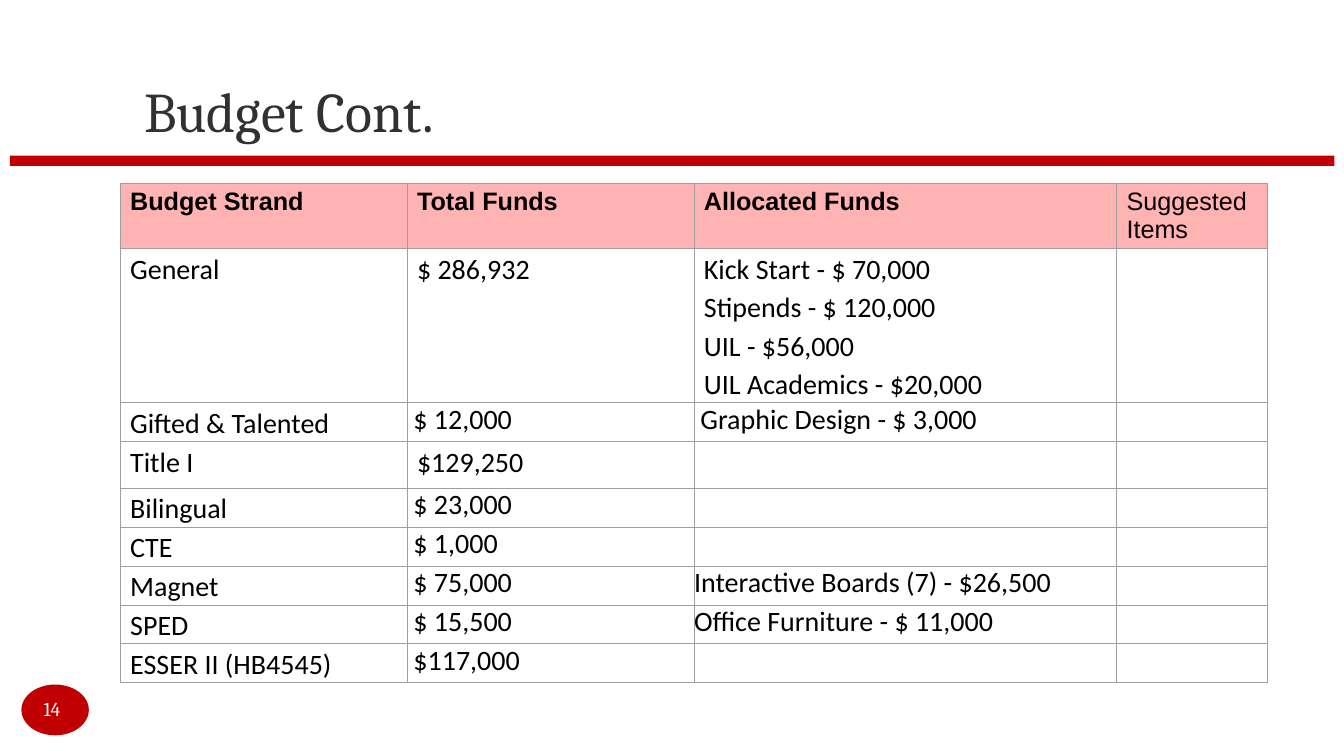
from lxml.etree import SubElement
from pptx import Presentation
from pptx.dml.color import RGBColor
from pptx.enum.shapes import MSO_SHAPE
from pptx.enum.text import MSO_ANCHOR, MSO_AUTO_SIZE, PP_ALIGN
from pptx.oxml.ns import qn
from pptx.util import Cm, Pt

RED = RGBColor(0xC0, 0x00, 0x00)
PINK = RGBColor(0xFF, 0xB3, 0xB3)
WHITE = RGBColor(0xFF, 0xFF, 0xFF)
BLACK = RGBColor(0x00, 0x00, 0x00)
CHARCOAL = RGBColor(0x31, 0x31, 0x31)
GREY = RGBColor(0x9E, 0x9E, 0x9E)


def add_text(paragraph, text, font_name, size, color, bold=False):
    run = paragraph.add_run()
    run.text = text
    run.font.name = font_name
    run.font.size = Pt(size)
    run.font.color.rgb = color
    run.font.bold = bold


def draw_borders(cell):
    properties = cell._tc.get_or_add_tcPr()
    for side in ("lnL", "lnR", "lnT", "lnB"):
        line = SubElement(properties, qn(f"a:{side}"), w=str(Pt(0.75)))
        fill = SubElement(line, qn("a:solidFill"))
        SubElement(fill, qn("a:srgbClr"), val=str(GREY))


presentation = Presentation()
presentation.slide_width = Cm(33.87)
presentation.slide_height = Cm(19.05)
slide = presentation.slides.add_slide(presentation.slide_layouts[5])

# Red rule and page badge
for preset, left, top, width, height in (
    (MSO_SHAPE.RECTANGLE, 0.25, 3.92, 33.38, 0.26),
    (MSO_SHAPE.OVAL, 0.54, 17.25, 1.7, 1.28),
):
    shape = slide.shapes.add_shape(preset, Cm(left), Cm(top), Cm(width), Cm(height))
    shape.shadow.inherit = False
    shape.fill.solid()
    shape.fill.fore_color.rgb = RED
    shape.line.fill.background()

# Title and page number
title = slide.shapes.title
title.left, title.top, title.width, title.height = Cm(3.63), Cm(1.93), Cm(7.8), Cm(1.75)
page_number = slide.shapes.add_textbox(Cm(1.1), Cm(17.55), Cm(0.8), Cm(0.66))
for box, text, size, color in (
    (title, "Budget Cont.", 40, CHARCOAL),
    (page_number, "14", 14, WHITE),
):
    frame = box.text_frame
    frame.margin_left = frame.margin_right = frame.margin_top = frame.margin_bottom = 0
    frame.vertical_anchor = MSO_ANCHOR.TOP
    frame.auto_size = MSO_AUTO_SIZE.NONE
    frame.word_wrap = True
    frame.paragraphs[0].alignment = PP_ALIGN.LEFT
    add_text(frame.paragraphs[0], text, "Cambria", size, color)

# Budget table
HEADERS = ["Budget Strand", "Total Funds", "Allocated Funds", "Suggested Items"]
GENERAL_ITEMS = [
    "Kick Start - $ 70,000",
    "Stipends - $ 120,000",
    "UIL - $56,000",
    "UIL Academics - $20,000",
]
STRANDS = [
    ("General", "$ 286,932", GENERAL_ITEMS),
    ("Gifted & Talented", "$ 12,000", ["Graphic Design - $ 3,000"]),
    ("Title I", "$129,250", []),
    ("Bilingual", "$ 23,000", []),
    ("CTE", "$ 1,000", []),
    ("Magnet", "$ 75,000", ["Interactive Boards (7) - $26,500"]),
    ("SPED", "$ 15,500", ["Office Furniture - $ 11,000"]),
    ("ESSER II (HB4545)", "$117,000", []),
]
COLUMN_WIDTHS = [7.23, 7.23, 10.65, 3.81]
ROW_HEIGHTS = [1.64, 3.84, 0.98, 1.18] + [0.98] * 5
PADDED_ROWS = ("Budget Strand", "General", "Title I")
FLUSH_ROWS = ("Magnet", "SPED")

rows = [[[header] for header in HEADERS]]
rows += [[[strand], [total], items, []] for strand, total, items in STRANDS]

table = slide.shapes.add_table(
    len(rows), len(HEADERS), Cm(3.03), Cm(4.62), Cm(sum(COLUMN_WIDTHS)), Cm(sum(ROW_HEIGHTS))
).table
table.horz_banding = False
for column, width in zip(table.columns, COLUMN_WIDTHS):
    column.width = Cm(width)

for row_index, (row, height) in enumerate(zip(rows, ROW_HEIGHTS)):
    table.rows[row_index].height = Cm(height)
    strand = row[0][0]
    is_header = row_index == 0
    for column_index, lines in enumerate(row):
        cell = table.cell(row_index, column_index)
        draw_borders(cell)
        cell.fill.solid()
        cell.fill.fore_color.rgb = PINK if is_header else WHITE
        cell.margin_right = cell.margin_bottom = 0
        if column_index == 0 or strand in PADDED_ROWS:
            cell.margin_left, cell.margin_top = Cm(0.25), Cm(0.1)
        else:
            flush = column_index == 2 and strand in FLUSH_ROWS
            cell.margin_left, cell.margin_top = Cm(0 if flush else 0.16), 0
        for line_index, text in enumerate(lines):
            frame = cell.text_frame
            if line_index == 0:
                paragraph = frame.paragraphs[0]
            else:
                paragraph = frame.add_paragraph()
                paragraph.space_before = Pt(3.1)
            if is_header:
                add_text(paragraph, text, "Arial", 18, BLACK, bold=column_index < 3)
            else:
                add_text(paragraph, text, "Calibri", 20, BLACK)

presentation.save("out.pptx")
